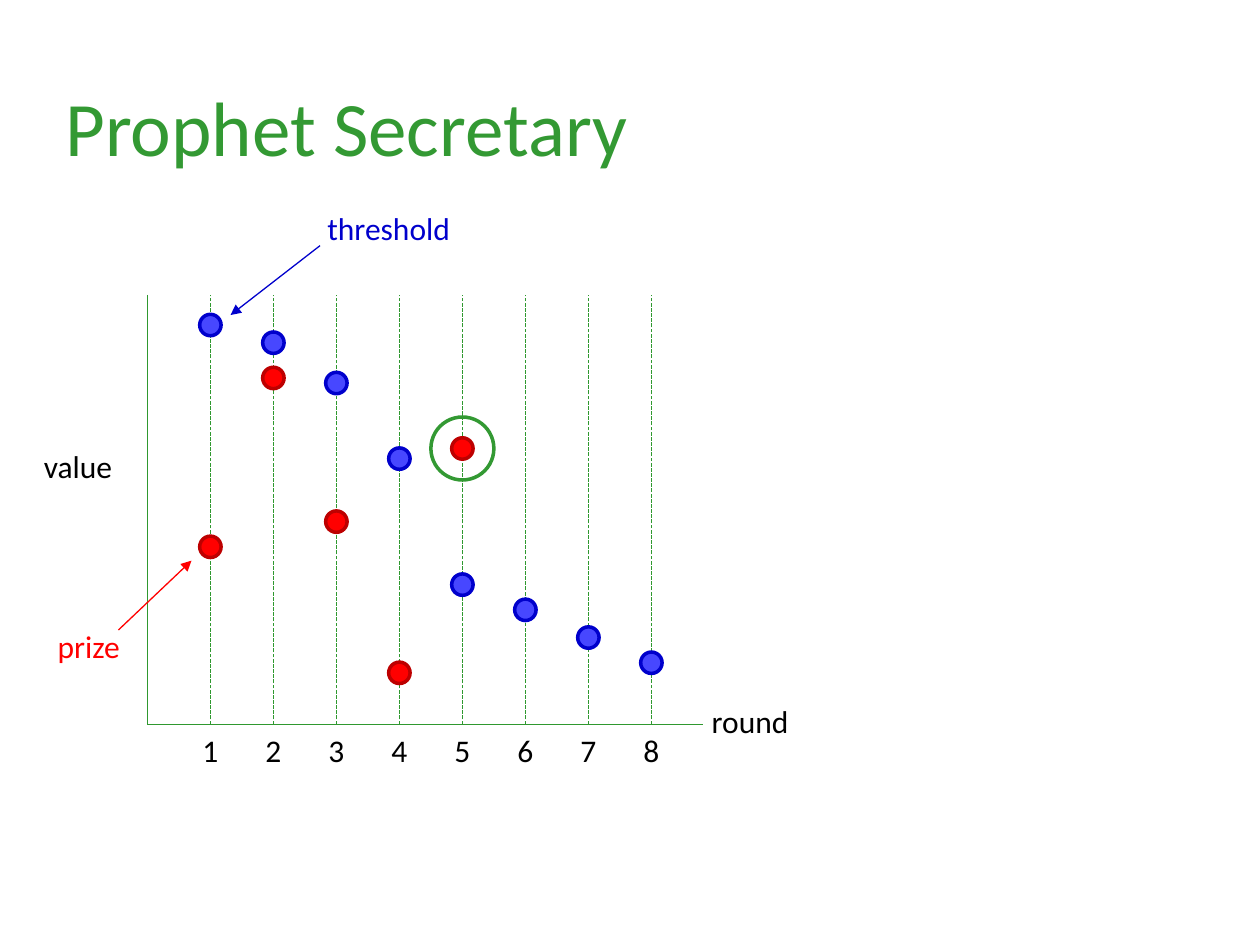
from pptx import Presentation
from pptx.dml.color import RGBColor
from pptx.enum.dml import MSO_LINE_DASH_STYLE as Dash
from pptx.enum.shapes import MSO_CONNECTOR as Connector, MSO_SHAPE as Shape
from pptx.enum.text import MSO_ANCHOR as Anchor, MSO_AUTO_SIZE as AutoSize, PP_ALIGN as Align
from pptx.oxml.ns import qn
from pptx.util import Inches, Pt
from lxml import etree

COLORS = {
    "title": "339933", "axis": "2F982F", "text": "000000",
    "threshold": "0000CC", "threshold_fill": "4747FF",
    "prize": "FF0000", "prize_line": "BD0000",
}
FONT = "Calibri"
TEXT_FRAME = {"word_wrap": False, "auto_size": AutoSize.NONE}

# Distance of each dot's centre below the top of the plot, round by round
THRESHOLDS = [0.24, 0.38, 0.7, 1.3, 2.3, 2.5, 2.72, 2.92]
PRIZES = [2.0, 0.66, 1.8, 3.0, 1.22]
FIRST_ROUND, ROUND_GAP = 0.5, 0.5
DOT, RING = 0.17, 0.5


def color(name):
    return RGBColor.from_string(COLORS[name])


def write(shape, text, size, color_name, align=Align.LEFT, anchor=Anchor.TOP):
    frame = shape.text_frame
    for name, value in {**TEXT_FRAME, "vertical_anchor": anchor}.items():
        setattr(frame, name, value)
    paragraph = frame.paragraphs[0]
    paragraph.alignment = align
    run = paragraph.add_run()
    run.text = text
    for name, value in {"name": FONT, "size": Pt(size)}.items():
        setattr(run.font, name, value)
    run.font.color.rgb = color(color_name)


def add_label(slide, text, left, top, width, color_name="text", align=Align.LEFT):
    box = slide.shapes.add_textbox(Inches(left), Inches(top), Inches(width), Inches(0.4))
    write(box, text, 18, color_name, align)


def add_line(slide, start, end, color_name="axis", dash=None, arrow=False):
    line = slide.shapes.add_connector(
        Connector.STRAIGHT, *(Inches(value) for value in (*start, *end)))
    line.line.color.rgb = color(color_name)
    line.line.width = Pt(0.75)
    if dash:
        line.line.dash_style = dash
    properties = line._element.spPr
    if arrow:
        outline = properties.find(qn("a:ln"))
        etree.SubElement(outline, qn("a:tailEnd"), type="triangle")
    etree.SubElement(properties, qn("a:effectLst"))


def add_circle(slide, x, y, diameter, line_name, fill_name=None):
    """Draw a circle centred on x, y; without a fill name it is a ring."""
    circle = slide.shapes.add_shape(
        Shape.OVAL, Inches(x - diameter / 2), Inches(y - diameter / 2),
        Inches(diameter), Inches(diameter))
    circle.shadow.inherit = False
    if fill_name:
        circle.fill.solid()
        circle.fill.fore_color.rgb = color(fill_name)
    else:
        circle.fill.background()
    circle.line.color.rgb = color(line_name)
    circle.line.width = Pt(2)


def add_title(slide, left, top, width, height):
    title = slide.shapes.title
    place = {"left": left, "top": top, "width": width, "height": height}
    for name, value in place.items():
        setattr(title, name, Inches(value))
    write(title, "Prophet Secretary", 44, "title")


def add_plot(slide, left, top, width, height):
    bottom = top + height
    rounds = [left + FIRST_ROUND + ROUND_GAP * i for i in range(len(THRESHOLDS))]

    add_line(slide, (left, top), (left, bottom))
    add_line(slide, (left, bottom), (left + width, bottom))
    add_label(slide, "value", left - 0.92, top + 1.16, 0.75)
    add_label(slide, "round", left + width - 0.03, bottom - 0.23, 0.82)

    for x in rounds:
        add_line(slide, (x, bottom), (x, top), dash=Dash.SQUARE_DOT)
    for number, x in enumerate(rounds, start=1):
        add_label(slide, str(number), x - 0.17, bottom, 0.34, align=Align.CENTER)

    for x, depth in zip(rounds, THRESHOLDS):
        add_circle(slide, x, top + depth, DOT, "threshold", "threshold_fill")
    for x, depth in zip(rounds, PRIZES):
        add_circle(slide, x, top + depth, DOT, "prize_line", "prize")
    accepted = len(PRIZES) - 1
    add_circle(slide, rounds[accepted], top + PRIZES[accepted], RING, "title")


def add_callouts(slide, left, top):
    """Name the two kinds of dot, placed from the plot's top left corner."""
    add_line(slide, (left + 1.37, top - 0.39), (left + 0.66, top + 0.16),
             "threshold", arrow=True)
    add_label(slide, "threshold", left + 1.33, top - 0.73, 1.19, "threshold")
    add_line(slide, (left - 0.23, top + 2.66), (left + 0.35, top + 2.11),
             "prize", arrow=True)
    add_label(slide, "prize", left - 0.81, top + 2.59, 0.7, "prize")


def main():
    presentation = Presentation()
    presentation.slide_width = Inches(10)
    presentation.slide_height = Inches(7.5)
    slide = presentation.slides.add_slide(presentation.slide_layouts[5])
    add_title(slide, 0.42, 0.58, 4.71, 0.84)
    add_plot(slide, 1.17, 2.34, 4.41, 3.41)
    add_callouts(slide, 1.17, 2.34)
    presentation.save("out.pptx")


if __name__ == "__main__":
    main()
